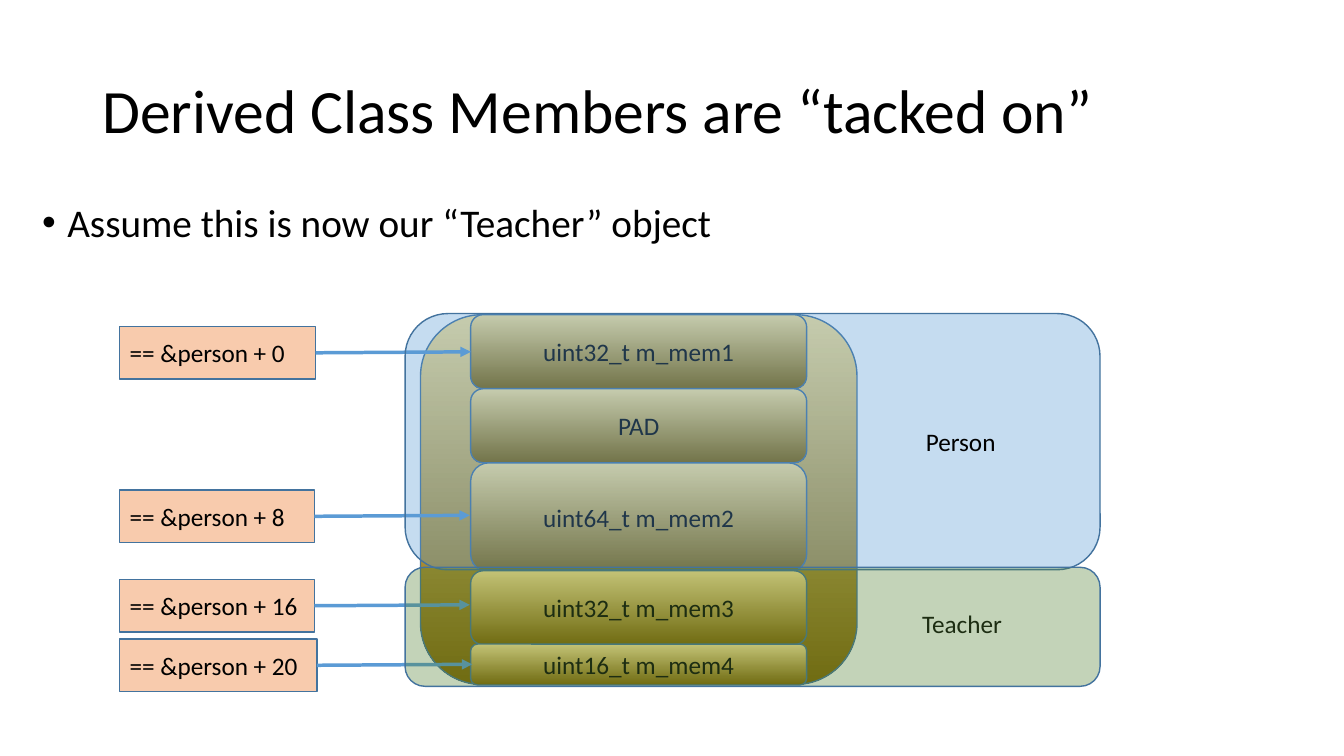
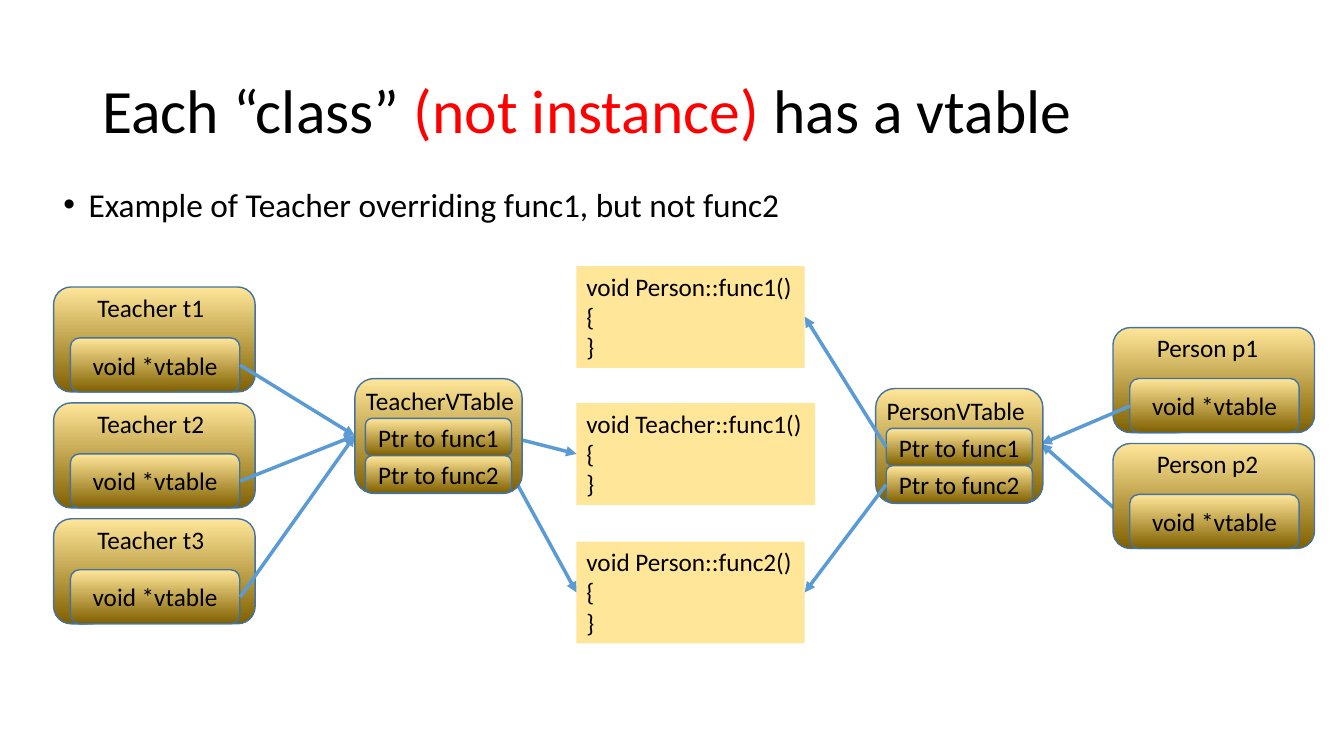
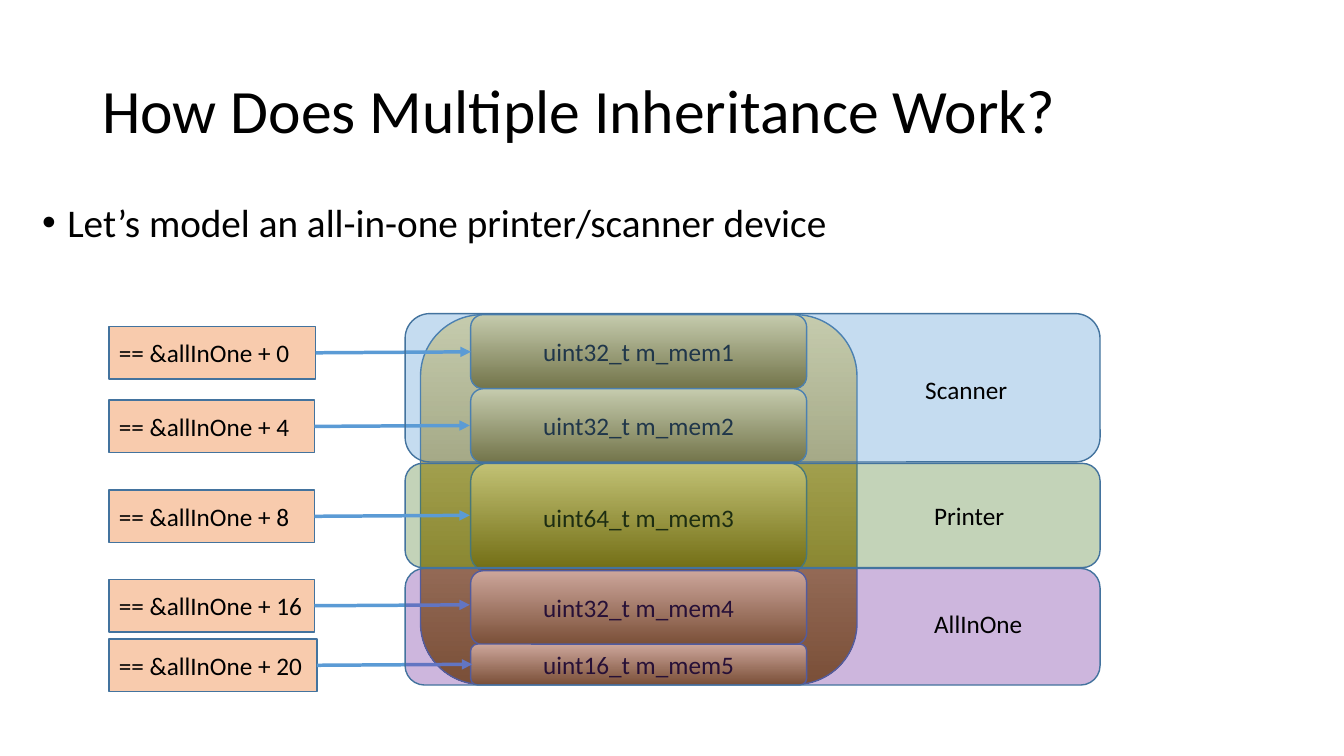
from lxml import etree
from pptx import Presentation
from pptx.dml.color import RGBColor
from pptx.enum import shapes, text as txt
from pptx.oxml.ns import qn
from pptx.util import Pt

FONT = "Calibri"
BLACK = RGBColor(0x00, 0x00, 0x00)
RED = RGBColor(0xFF, 0x00, 0x00)
SAND = RGBColor(0xFF, 0xE6, 0x99)
BRONZE = RGBColor(0x80, 0x60, 0x00)
PEACH = RGBColor(0xF8, 0xCB, 0xAD)
OUTLINE = RGBColor(0x43, 0x73, 0x9E)
BLUE = RGBColor(0x5B, 0x9B, 0xD5)
GREEN = RGBColor(0x54, 0x82, 0x35)
PURPLE = RGBColor(0x70, 0x30, 0xA0)

RECT = shapes.MSO_SHAPE.RECTANGLE
ROUNDED = shapes.MSO_SHAPE.ROUNDED_RECTANGLE
MIDDLE = txt.MSO_ANCHOR.MIDDLE
LEFT, CENTER = txt.PP_ALIGN.LEFT, txt.PP_ALIGN.CENTER

MEMBER_X, MEMBER_W = 336.2, 240
MEMBER_ROWS = [(224.8, 52.8), (277.7, 52.8), (330.6, 78.2), (407.7, 52.8), (460.1, 29.2)]
# byte offset -> top and right edge of its address tag
TAG_ROWS = {0: (233.2, 225.4), 4: (285.8, 224.6), 8: (350, 224.6),
            16: (413.9, 224.6), 20: (456.4, 226.4)}
TAG_H = 37.6
CARD_PITCH = 82.8
CODE_X = 411.8


def write(sp, text, size=18, color=BLACK, align=LEFT, anchor=txt.MSO_ANCHOR.TOP,
          wrap=True, line_spacing=None, before=None, bullet=None,
          highlight=None, highlight_color=RED):
    """Fill a shape with text, one paragraph a line."""
    tf = sp.text_frame
    tf.word_wrap = wrap
    tf.auto_size = txt.MSO_AUTO_SIZE.NONE if wrap else txt.MSO_AUTO_SIZE.SHAPE_TO_FIT_TEXT
    tf.vertical_anchor = anchor
    for i, line in enumerate(text.split("\n")):
        p = tf.add_paragraph() if i else tf.paragraphs[0]
        p.alignment = align
        p.line_spacing = line_spacing
        if before is not None:
            p.space_before = Pt(before)
        if bullet:
            pPr = p._p.get_or_add_pPr()
            pPr.set("marL", str(Pt(18)))
            pPr.set("indent", str(-Pt(18)))
            etree.SubElement(pPr, qn("a:buFont")).set("typeface", "Arial")
            etree.SubElement(pPr, qn("a:buChar")).set("char", bullet)
        for part in line.partition(highlight) if highlight else [line]:
            r = p.add_run()
            r.text = part
            r.font.name = FONT
            r.font.size = Pt(size)
            r.font.color.rgb = highlight_color if part == highlight else color


def text_box(s, x, y, w, h, text, **fmt):
    sp = s.shapes.add_textbox(Pt(x), Pt(y), Pt(w), Pt(h))
    write(sp, text, **fmt)
    return sp


def box(s, kind, x, y, w, h, outlined=True):
    sp = s.shapes.add_shape(kind, Pt(x), Pt(y), Pt(w), Pt(h))
    sp.shadow.inherit = False
    if outlined:
        sp.line.color.rgb = OUTLINE
        sp.line.width = Pt(1)
    else:
        sp.line.fill.background()
    return sp


def bronze_box(s, x, y, w, h, text=None):
    sp = box(s, ROUNDED, x, y, w, h)
    sp.fill.gradient()
    sp.fill.gradient_angle = 270
    for stop, color in zip(sp.fill.gradient_stops, (SAND, BRONZE)):
        stop.color.rgb = color
    if text:
        write(sp, text, align=CENTER, anchor=MIDDLE)


def arrow(s, x1, y1, x2, y2):
    c = s.shapes.add_connector(shapes.MSO_CONNECTOR.STRAIGHT,
                               Pt(x1), Pt(y1), Pt(x2), Pt(y2))
    c.line.color.rgb = BLUE
    c.line.width = Pt(2.5)
    etree.SubElement(c.line._get_or_add_ln(), qn("a:tailEnd")).set("type", "triangle")
    etree.SubElement(c._element.spPr, qn("a:effectLst"))


def label(s, x, y, w, text):
    text_box(s, x, y, w, 29.1, text, wrap=False)


def new_slide(prs, title, highlight=None):
    s = prs.slides.add_slide(prs.slide_layouts[6])
    text_box(s, 66, 28.8, 828, 104.4, title, size=44, anchor=MIDDLE,
             line_spacing=0.9, highlight=highlight)
    return s


def bullet_line(s, text, x=23, y=141.8, w=589, size=28, line_spacing=0.9):
    text_box(s, x, y, w, 48.2, text, size=size, line_spacing=line_spacing,
             before=10, bullet="•")


def members(s, names):
    """Object in memory: one container with a stack of its members."""
    bronze_box(s, 300.4, 224.8, 311.8, 264.2)
    for name, (y, h) in zip(names, MEMBER_ROWS):
        bronze_box(s, MEMBER_X, y, MEMBER_W, h, name)


def address_tags(s, x, variable, offsets):
    for offset in offsets:
        y, right = TAG_ROWS[offset]
        sp = box(s, RECT, x, y, right - x, TAG_H)
        sp.fill.solid()
        sp.fill.fore_color.rgb = PEACH
        write(sp, f"== &{variable} + {offset}", anchor=MIDDLE)
        middle = y + TAG_H / 2
        arrow(s, right, middle, right + 111, middle - 0.7)


def class_band(s, y, h, color):
    """Translucent band over the members that belong to one class."""
    sp = box(s, ROUNDED, 289.4, y, 496.4, h)
    sp.fill.solid()
    sp.fill.fore_color.rgb = color
    rgb = sp._element.spPr.find(qn("a:solidFill")).find(qn("a:srgbClr"))
    etree.SubElement(rgb, qn("a:alpha")).set("val", "35000")


def instance_card(s, x, y, name, label_w):
    bronze_box(s, x, y, 144, 75)
    bronze_box(s, x + 12, y + 36.4, 121, 38.6, "void *vtable")
    label(s, x + 24.2, y, label_w, name)


def vtable_card(s, x, y, name, label_w):
    bronze_box(s, x, y, 119.5, 82)
    for i in range(2):
        bronze_box(s, x + 7.5, y + 28.5 + 26.7 * i, 104.4, 26.7, f"Ptr to func{i + 1}")
    label(s, x + 0.8, y + 1, label_w, name)


def code_box(s, y, w, signature):
    sp = box(s, RECT, CODE_X, y, w, 72.7, outlined=False)
    sp.fill.solid()
    sp.fill.fore_color.rgb = SAND
    write(sp, f"{signature}\n{{\n}}", wrap=False)


def derived_members_slide(prs):
    s = new_slide(prs, "Derived Class Members are “tacked on”")
    bullet_line(s, "Assume this is now our “Teacher” object")
    members(s, ["uint32_t m_mem1", "PAD", "uint64_t m_mem2",
                "uint32_t m_mem3", "uint16_t m_mem4"])
    address_tags(s, 85.5, "person", [0, 8, 16, 20])
    class_band(s, 224, 183, BLUE)
    label(s, 651.6, 431.3, 72, "Teacher")
    label(s, 654.2, 301.2, 64.8, "Person")
    class_band(s, 405.2, 85, GREEN)


def vtable_slide(prs):
    s = new_slide(prs, "Each “class” (not instance) has a vtable", highlight="(not instance) ")
    bullet_line(s, "Example of Teacher overriding func1, but not func2",
                x=38.2, y=133.9, size=23.8, line_spacing=0.8)
    code_box(s, 190, 163, "void Person::func1()")
    code_box(s, 288, 170.6, "void Teacher::func1()")
    code_box(s, 386.8, 163, "void Person::func2()")

    for i in range(3):
        instance_card(s, 38.3, 205 + CARD_PITCH * i, f"Teacher t{i + 1}", 91.4)
    for i in range(3):
        arrow(s, 171.6, 260.8 + CARD_PITCH * i, 253.4, 311.2)
    arrow(s, 365.8, 312.5, CODE_X, 324.2)
    arrow(s, 365.8, 339.1, CODE_X, 423.2)

    arrow(s, 807.1, 373, 743.8, 317)
    for i in range(2):
        instance_card(s, 795, 234 + CARD_PITCH * i, f"Person p{i + 1}", 87.8)
    arrow(s, 807.1, 290, 743.8, 317)

    vtable_card(s, 253.5, 270.4, "TeacherVTable", 121.7)
    vtable_card(s, 625.5, 277.5, "PersonVTable", 114.5)
    arrow(s, 633, 319.4, 574.8, 226.2)
    arrow(s, 633, 346.1, 574.8, 423.2)


def multiple_inheritance_slide(prs):
    s = new_slide(prs, "How Does Multiple Inheritance Work?")
    bullet_line(s, "Let’s model an all-in-one printer/scanner device")
    members(s, ["uint32_t m_mem1", "uint32_t m_mem2", "uint64_t m_mem3",
                "uint32_t m_mem4", "uint16_t m_mem5"])
    class_band(s, 331, 74.4, GREEN)
    address_tags(s, 77.8, "allInOne", TAG_ROWS)
    class_band(s, 224, 106, BLUE)
    class_band(s, 406, 83.3, PURPLE)
    label(s, 653.8, 263.5, 73.4, "Scanner")
    label(s, 660.2, 353.8, 64.8, "Printer")
    label(s, 660.2, 431.3, 78.5, "AllInOne")


def main():
    prs = Presentation()
    prs.slide_width, prs.slide_height = Pt(960), Pt(540)
    derived_members_slide(prs)
    vtable_slide(prs)
    multiple_inheritance_slide(prs)
    prs.save("out.pptx")


if __name__ == "__main__":
    main()
